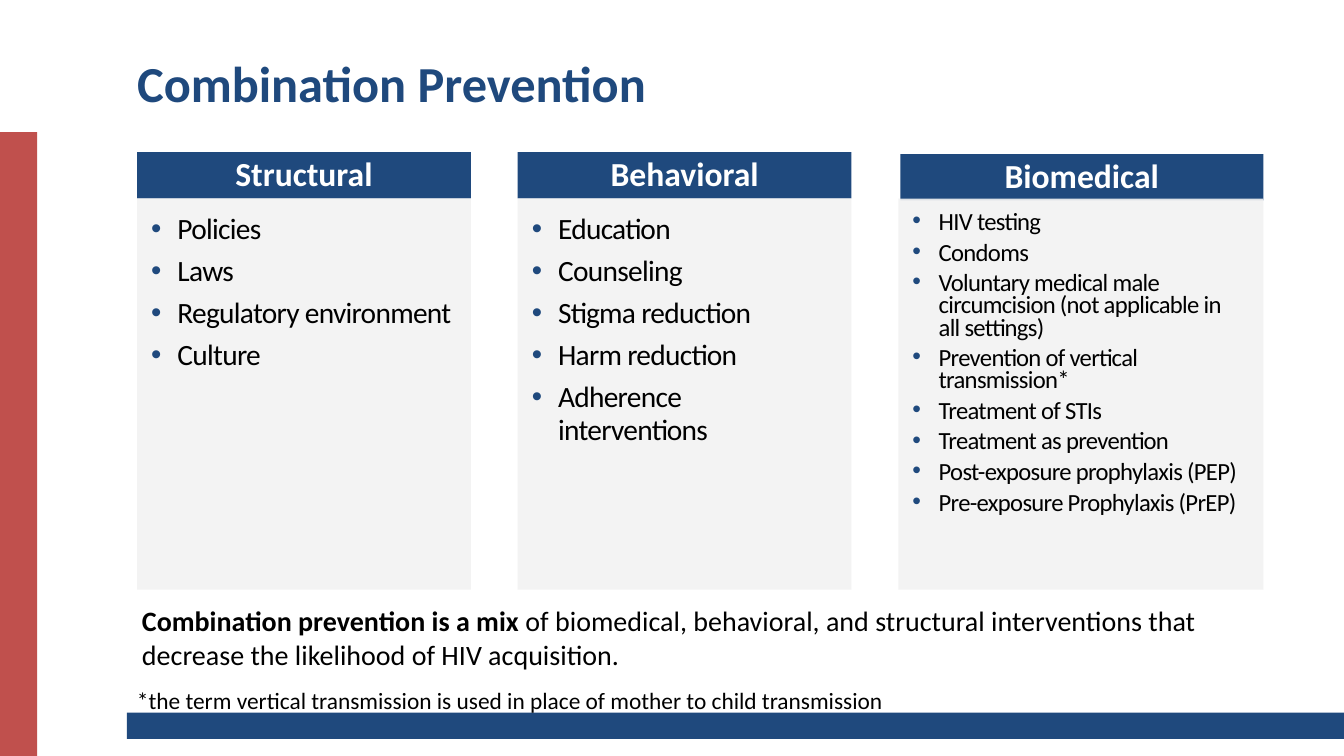
"""Build the Combination Prevention slide with three columns of interventions."""
from lxml import etree
from pptx import Presentation
from pptx.dml.color import RGBColor
from pptx.enum.shapes import MSO_SHAPE
from pptx.enum.text import MSO_ANCHOR, MSO_AUTO_SIZE, PP_ALIGN
from pptx.oxml.ns import qn
from pptx.util import Inches, Pt

RECT = MSO_SHAPE.RECTANGLE
TOP, MIDDLE = MSO_ANCHOR.TOP, MSO_ANCHOR.MIDDLE
LEFT, CENTER = PP_ALIGN.LEFT, PP_ALIGN.CENTER
NO_FIT = MSO_AUTO_SIZE.NONE

THEME = {
    "font": "Calibri",
    "navy": "1F497D", "red": "C0504D", "panel": "F2F2F2",
    "black": "000000", "white": "FFFFFF",
    "title": 36, "header": 24, "list": 21, "dense": 17.6, "note": 20, "footnote": 16.7,
}
W, H = 13.33, 7.5
COL_X, COL_PITCH = 1.36, 3.775
HEAD_Y, HEAD_H = 1.51, 0.46
BODY_Y, BODY_H = HEAD_Y + HEAD_H, 3.88
INDENT = Inches(0.26)

COLUMNS = [
    ("Structural", 3.31, 0, "list", 0.95,
     ["Policies", "Laws", "Regulatory environment", "Culture"]),
    ("Behavioral", 3.31, 0, "list", 0.95,
     ["Education", "Counseling", "Stigma reduction", "Harm reduction",
      "Adherence interventions"]),
    ("Biomedical", 3.62, 0.02, "dense", 0.75,
     ["HIV testing", "Condoms",
      "Voluntary medical male circumcision (not applicable in all settings)",
      "Prevention of vertical transmission*", "Treatment of STIs",
      "Treatment as prevention", "Post-exposure prophylaxis (PEP)",
      "Pre-exposure Prophylaxis (PrEP)"]),
]
NOTES = [
    (1.26, 6.76, 8.59, 0.33, "footnote",
     [("*the term vertical transmission is used in place of mother to child transmission", False)]),
    (1.31, 5.94, 11.22, 0.77, "note",
     [("Combination prevention is a mix ", True),
      ("of biomedical, behavioral, and structural interventions that decrease "
       "the likelihood of HIV acquisition.", False)]),
]


def add_box(x, y, w, h, color, insets=(0.1, 0.05, 0.1, 0.05), anchor=TOP):
    """Add a plain filled rectangle and return it."""
    sp = s.shapes.add_shape(RECT, Inches(x), Inches(y), Inches(w), Inches(h))
    sp.shadow.inherit = False
    sp.fill.solid()
    sp.fill.fore_color.rgb = RGBColor.from_string(THEME[color])
    sp.line.fill.background()
    tf = sp.text_frame
    tf.word_wrap = True
    tf.vertical_anchor = anchor
    tf.margin_left, tf.margin_top, tf.margin_right, tf.margin_bottom = map(Inches, insets)
    return sp


def add_run(p, text, size, color, bold=False):
    """Add a run in the theme's font and return it."""
    r = p.add_run()
    r.text = text
    r.font.name = THEME["font"]
    r.font.size = Pt(THEME[size])
    r.font.bold = bold
    r.font.color.rgb = RGBColor.from_string(THEME[color])
    return r


prs = Presentation()
prs.slide_width, prs.slide_height = Inches(W), Inches(H)
s = prs.slides.add_slide(prs.slide_layouts[5])

add_box(1.26, 7.07, W - 1.26, 0.26, "navy")
add_box(0, 1.31, 0.37, H - 1.31, "red")

title = s.shapes.title
title.left, title.top, title.width, title.height = map(Inches, (1.26, 0.35, 11.54, 0.94))
tf = title.text_frame
tf.auto_size = NO_FIT
tf.vertical_anchor = MIDDLE
p = tf.paragraphs[0]
p.alignment = LEFT
add_run(p, "Combination Prevention", "title", "navy", True)

for i, (name, width, nudge, size, spacing, items) in enumerate(COLUMNS):
    x = COL_X + i * COL_PITCH
    header = add_box(x + nudge, HEAD_Y + nudge, width - nudge, HEAD_H, "navy",
                     (0.19, 0.11, 0.19, 0.11), MIDDLE)
    p = header.text_frame.paragraphs[0]
    p.alignment = CENTER
    p.line_spacing = 0.9
    add_run(p, name, "header", "white", True)

    panel = add_box(x, BODY_Y, width, BODY_H, "panel", (0.14, 0.14, 0.19, 0.21))
    fill = panel.fill.fore_color._xFill.find(qn("a:srgbClr"))
    etree.SubElement(fill, qn("a:alpha"), val="90000")
    tf = panel.text_frame
    for j, item in enumerate(items):
        p = tf.add_paragraph() if j else tf.paragraphs[0]
        p.alignment = LEFT
        p.line_spacing = spacing
        p.space_after = Pt(6)
        pPr = p._p.get_or_add_pPr()
        pPr.set("marL", str(INDENT))
        pPr.set("indent", str(-INDENT))
        bullet_color = etree.SubElement(pPr, qn("a:buClr"))
        etree.SubElement(bullet_color, qn("a:srgbClr"), val=THEME["navy"])
        etree.SubElement(pPr, qn("a:buFont"), typeface="Arial")
        etree.SubElement(pPr, qn("a:buChar"), char="•")
        r = add_run(p, item, size, "black")
        r._r.get_or_add_rPr().set("spc", "-50")

for x, y, w, h, size, runs in NOTES:
    tf = s.shapes.add_textbox(Inches(x), Inches(y), Inches(w), Inches(h)).text_frame
    tf.word_wrap = True
    p = tf.paragraphs[0]
    for text, bold in runs:
        add_run(p, text, size, "black", bold)

prs.save("out.pptx")
